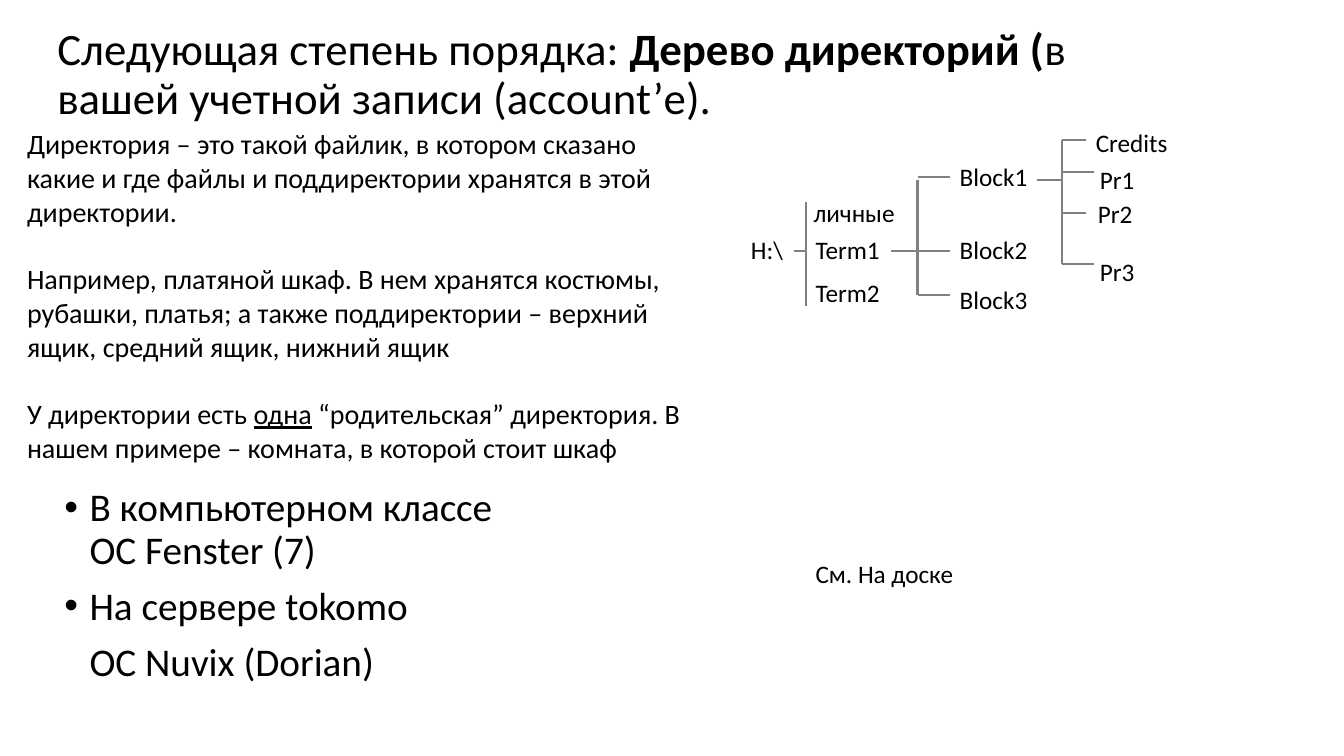
"""Builds the slide about the directory tree."""
from lxml.etree import SubElement
from pptx import Presentation
from pptx.dml.color import RGBColor
from pptx.enum.shapes import MSO_CONNECTOR
from pptx.enum.text import MSO_ANCHOR, PP_ALIGN
from pptx.oxml.ns import qn
from pptx.util import Inches, Pt

TITLE = [[("Следующая степень порядка: ", ""), ("Дерево директорий (", "bold"),
          ("в вашей учетной записи (account’е).", "")]]
DEFINITION = [
    [("Директория – это такой файлик, в котором сказано какие и где файлы и "
      "поддиректории хранятся в этой директории.", "")],
    [("Например, платяной шкаф. В нем хранятся костюмы, рубашки, платья; а также "
      "поддиректории – верхний ящик, средний ящик, нижний ящик", "")],
    [("У директории есть ", ""), ("одна", "underline"),
     (" “родительская” директория. В нашем примере – комната, в которой стоит шкаф", "")],
]
SYSTEMS = [[("В компьютерном классе \vОС Fenster (7)", "")],
           [("На сервере tokomo", "")], [("ОС Nuvix (Dorian)", "")]]
BULLETED = 2

ROOT, TERM, BLOCK, PROGRAM = 7.35, 7.99, 9.42, 10.81
BLOCK_STEM, PROGRAM_STEM = 9.1, 10.53
TERM_ROW = 2.28
LABEL_HEIGHT = 0.42
LABELS = [
    ("H:\\", ROOT, TERM_ROW, 0.53),
    ("личные", 7.97, 1.91, 1.02),
    ("Term1", TERM, TERM_ROW, 0.85),
    ("Term2", TERM, 2.7, 0.85),
    ("Block1", BLOCK, 1.55, 0.89),
    ("Block2", BLOCK, TERM_ROW, 0.89),
    ("Block3", BLOCK, 2.77, 0.89),
    ("Credits", 10.77, 1.21, 0.93),
    ("Pr1", PROGRAM, 1.58, 0.55),
    ("Pr2", 10.79, 1.92, 0.55),
    ("Pr3", PROGRAM, 2.49, 0.55),
    ("См. На доске", TERM, 5.49, 1.58),
]
JOINS = [("H:\\", "Term1"), ("Term1", "Block2")]
STEMS = [(TERM, 2, 3.04), (BLOCK_STEM, 1.79, 2.93), (PROGRAM_STEM, 1.39, 2.62)]
BRANCHES = [
    (BLOCK_STEM, 1.76, BLOCK), (BLOCK_STEM, 2.93, BLOCK),
    (10.29, 1.79, PROGRAM_STEM),
    (PROGRAM_STEM, 1.39, 10.77), (PROGRAM_STEM, 1.71, 10.85),
    (PROGRAM_STEM, 2.11, 10.77), (PROGRAM_STEM, 2.62, 10.85),
]


def color(value):
    """Turn a hex string into a colour."""
    return RGBColor.from_string(value)


def add_text(page, paragraphs, left, top, width, height, *, size=18, wrap=True,
             anchor=MSO_ANCHOR.TOP, spacing=None, before=0):
    """Add a text box made of paragraphs of (text, style) spans."""
    box = page.shapes.add_textbox(*map(Inches, (left, top, width, height)))
    frame = box.text_frame
    frame.word_wrap = wrap
    frame.vertical_anchor = anchor
    for index, spans in enumerate(paragraphs):
        para = frame.add_paragraph() if index else frame.paragraphs[0]
        para.alignment = PP_ALIGN.LEFT
        para.line_spacing = spacing
        para.space_before = Pt(before if index else 0)
        for text, style in spans:
            if "\v" in text:
                head, text = text.split("\v")
                add_span(para, head, style, size)
                para.add_line_break()
            add_span(para, text, style, size)
    return box


def add_span(para, text, style, size):
    """Add one formatted span to a paragraph."""
    span = para.add_run()
    span.text = text
    span.font.name = "Calibri"
    span.font.size = Pt(size)
    span.font.color.rgb = color("000000")
    span.font.bold = style == "bold"
    span.font.underline = style == "underline"


def indent(para, bullet):
    """Indent a paragraph, hanging it from a bullet if asked."""
    settings = para._p.get_or_add_pPr()
    settings.set("marL", str(Inches(0.25)))
    settings.set("indent", str(Inches(-0.25 if bullet else 0)))
    if bullet:
        SubElement(settings, qn("a:buFont")).set("typeface", "Arial")
        SubElement(settings, qn("a:buChar")).set("char", "•")


def add_line(page, left, top, right, bottom):
    """Add a thin grey line of the tree."""
    line = page.shapes.add_connector(
        MSO_CONNECTOR.STRAIGHT, *map(Inches, (left, top, right, bottom)))
    line.line.color.rgb = color("808080")
    line.line.width = Pt(1.5)
    SubElement(line._element.spPr, qn("a:effectLst"))
    return line


def main():
    """Build and save the slide."""
    deck = Presentation()
    deck.slide_width, deck.slide_height = Inches(13.33), Inches(7.5)
    page = deck.slides.add_slide(deck.slide_layouts[6])

    add_text(page, TITLE, 0.47, 0.15, 11.4, 1.2, size=32,
             anchor=MSO_ANCHOR.MIDDLE, spacing=0.9)
    add_text(page, DEFINITION, 0.17, 1.21, 6.87, 3.47, size=20, before=24.4)
    systems = add_text(page, SYSTEMS, 0.54, 4.79, 5.84, 2.42, size=28,
                       spacing=0.9, before=10)
    for index, para in enumerate(systems.text_frame.paragraphs):
        indent(para, index < BULLETED)

    boxes = {text: add_text(page, [[(text, "")]], left, top, width, LABEL_HEIGHT, wrap=False)
             for text, left, top, width in LABELS}
    for x, top, bottom in STEMS:
        add_line(page, x, top, x, bottom)
    for left, y, right in BRANCHES:
        line = add_line(page, left, y, right, y)
        if (left, y) == (BLOCK_STEM, 1.76):
            line.end_connect(boxes["Block1"], 1)
    for parent, child in JOINS:
        line = add_line(page, ROOT, TERM_ROW, TERM, TERM_ROW)
        line.begin_connect(boxes[parent], 3)
        line.end_connect(boxes[child], 1)
    deck.save("out.pptx")


if __name__ == "__main__":
    main()
